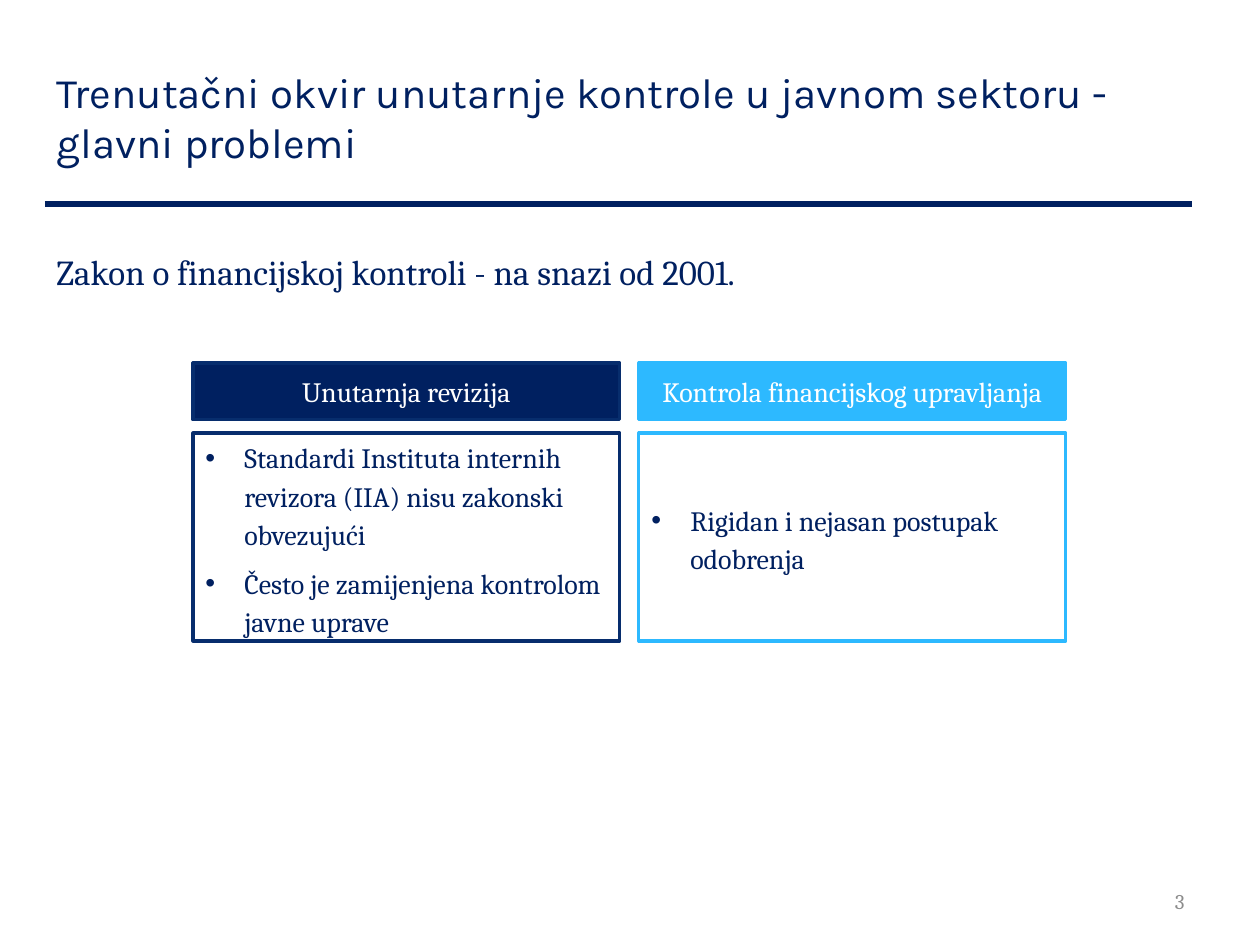
import dataclasses

import pptx
import pptx.dml.color
import pptx.enum.shapes
import pptx.enum.text
import pptx.oxml
import pptx.oxml.ns
import pptx.util

PX = 914400 // 126
ALIGN = pptx.enum.text.PP_ALIGN
ANCHOR = pptx.enum.text.MSO_ANCHOR


@dataclasses.dataclass(frozen=True)
class Theme:
    navy: str = "002060"
    navy_edge: str = "072D6D"
    sky: str = "2DB9FF"
    white: str = "FFFFFF"
    grey: str = "8C8C8C"
    title_font: str = "Karla"
    body_font: str = "Cambria"
    title_size: int = 24
    lead_size: int = 20
    card_size: int = 16
    number_size: int = 12
    rule_width: float = 3
    card_line: float = 1.75


THEME = Theme()


def px(*values):
    return [pptx.util.Emu(value * PX) for value in values]


def rgb(value):
    return pptx.dml.color.RGBColor.from_string(value)


def write(shape, lines, size, color, font=THEME.body_font, align=ALIGN.LEFT, anchor=ANCHOR.MIDDLE):
    frame = shape.text_frame
    frame.text = "\n".join(lines)
    frame.word_wrap = True
    frame.auto_size = pptx.enum.text.MSO_AUTO_SIZE.NONE
    frame.vertical_anchor = anchor
    for paragraph in frame.paragraphs:
        paragraph.alignment = align
        for run in paragraph.runs:
            run.font.name = font
            run.font.size = pptx.util.Pt(size)
            run.font.color.rgb = rgb(color)


def add_bullets(paragraphs, indent):
    for paragraph in paragraphs:
        paragraph.line_spacing = 1.14
        paragraph.space_before = pptx.util.Pt(6)
        properties = paragraph._p.get_or_add_pPr()
        properties.set("marL", str(indent * PX))
        properties.set("indent", str(-indent * PX))
        for tag, name, value in (("a:buFont", "typeface", "Arial"), ("a:buChar", "char", "•")):
            bullet = pptx.oxml.parse_xml(f"<{tag} {pptx.oxml.ns.nsdecls('a')}/>")
            bullet.set(name, value)
            properties.append(bullet)


def add_header(slide, left, top, width, height):
    title = slide.shapes.title
    title.left, title.top, title.width, title.height = px(left, top, width, height)
    write(
        title,
        ["Trenutačni okvir unutarnje kontrole u javnom sektoru - glavni problemi"],
        THEME.title_size,
        THEME.navy,
        THEME.title_font,
    )
    rule_y = top + height + 9
    rule = slide.shapes.add_connector(
        pptx.enum.shapes.MSO_CONNECTOR.STRAIGHT, *px(left + 1, rule_y, left + 1148, rule_y)
    )
    rule.line.color.rgb = rgb(THEME.navy)
    rule.line.width = pptx.util.Pt(THEME.rule_width)
    rule._element.spPr.append(pptx.oxml.parse_xml(f"<a:effectLst {pptx.oxml.ns.nsdecls('a')}/>"))


def add_text(slide, box, text, size, color, align, anchor):
    shape = slide.shapes.add_textbox(*px(*box))
    write(shape, [text], size, color, align=align, anchor=anchor)


def add_panel(slide, box, line, fill=None):
    panel = slide.shapes.add_shape(pptx.enum.shapes.MSO_SHAPE.RECTANGLE, *px(*box))
    panel.shadow.inherit = False
    panel.line.color.rgb = rgb(line)
    panel.line.width = pptx.util.Pt(THEME.card_line)
    if fill:
        panel.fill.solid()
        panel.fill.fore_color.rgb = rgb(fill)
    else:
        panel.fill.background()
    return panel


def add_card(slide, left, top, width, height, heading, points, fill, line):
    heading_height, gap = 57, 13
    body_offset = heading_height + gap
    banner = add_panel(slide, (left, top, width, heading_height), line, fill)
    write(banner, [heading], THEME.card_size, THEME.white, align=ALIGN.CENTER)
    body = add_panel(slide, (left, top + body_offset, width, height - body_offset), line)
    write(body, points, THEME.card_size, THEME.navy)
    add_bullets(body.text_frame.paragraphs, indent=39)


def add_cards(slide, left, top, width, height):
    cards = [
        (
            "Unutarnja revizija",
            [
                "Standardi Instituta internih revizora (IIA) nisu zakonski obvezujući",
                "Često je zamijenjena kontrolom javne uprave",
            ],
            THEME.navy,
            THEME.navy_edge,
        ),
        (
            "Kontrola financijskog upravljanja",
            ["Rigidan i nejasan postupak odobrenja"],
            THEME.sky,
            THEME.sky,
        ),
    ]
    gap = 19
    card_width = (width - gap * (len(cards) - 1)) // len(cards)
    for index, card in enumerate(cards):
        add_card(slide, left + index * (card_width + gap), top, card_width, height, *card)


def main():
    presentation = pptx.Presentation()
    presentation.slide_width, presentation.slide_height = px(1260, 945)
    slide = presentation.slides.add_slide(presentation.slide_layouts[5])
    add_header(slide, 44, 38, 1171, 157)
    add_text(
        slide,
        (44, 244, 1153, 63),
        "Zakon o financijskoj kontroli - na snazi od 2001.",
        THEME.lead_size,
        THEME.navy,
        ALIGN.LEFT,
        ANCHOR.TOP,
    )
    add_cards(slide, 193, 363, 873, 278)
    add_text(
        slide, (903, 876, 294, 50), "3", THEME.number_size, THEME.grey, ALIGN.RIGHT, ANCHOR.MIDDLE
    )
    presentation.save("out.pptx")


if __name__ == "__main__":
    main()
